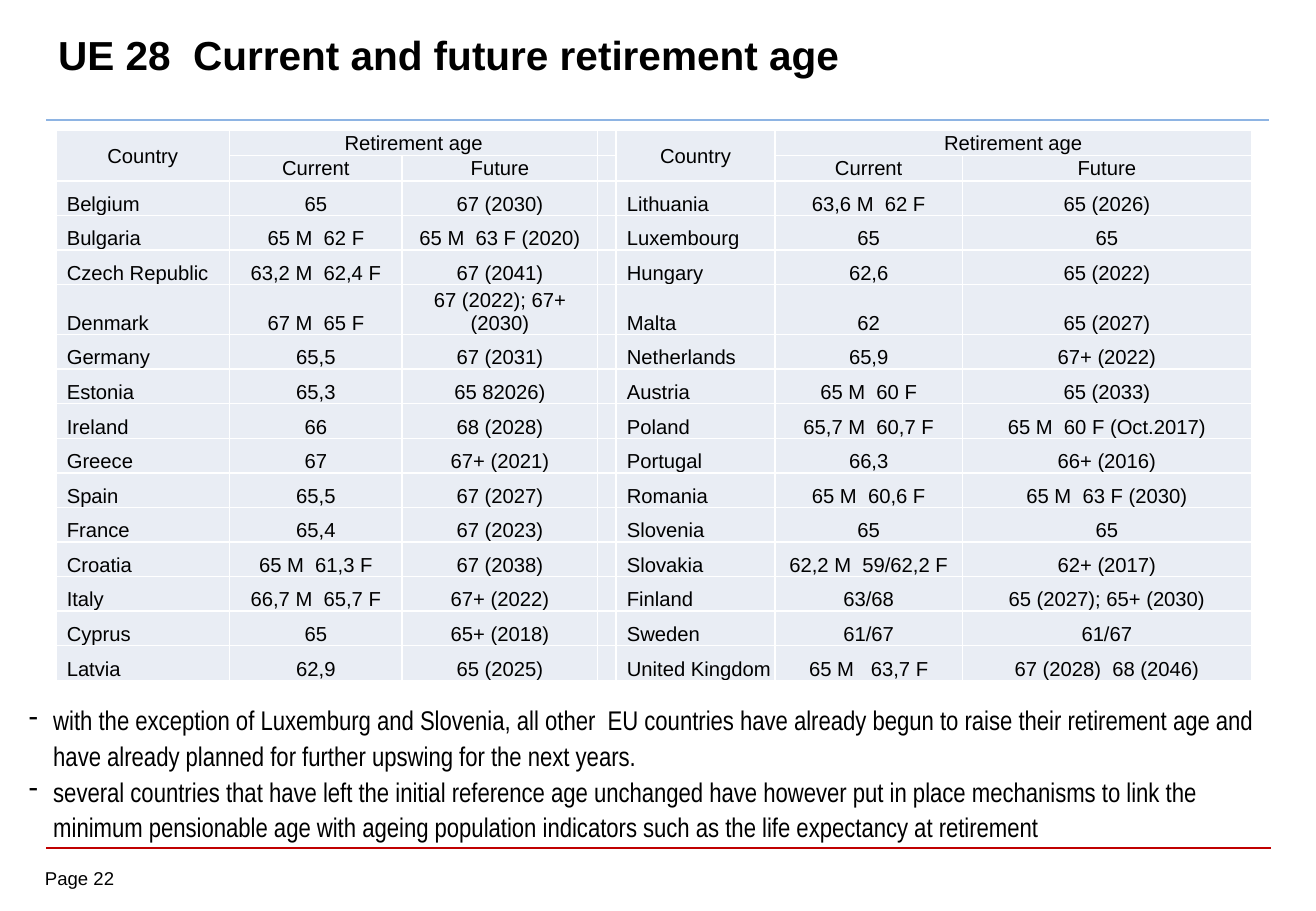
from pptx import Presentation
from pptx.dml.color import RGBColor
from pptx.enum.shapes import MSO_CONNECTOR
from pptx.enum.text import MSO_ANCHOR, PP_ALIGN
from pptx.oxml.xmlchemy import OxmlElement
from pptx.util import Pt

PX = 4572  # EMU per px, 200 px to the inch
BLACK = RGBColor(0x00, 0x00, 0x00)
WHITE = RGBColor(0xFF, 0xFF, 0xFF)
RED = RGBColor(0xC0, 0x00, 0x00)
LIGHT_BLUE = RGBColor(0x8E, 0xB4, 0xE3)
CELL_FILL = RGBColor(0xE9, 0xED, 0xF4)

COLUMN_WIDTHS = [286, 284, 322, 30, 262, 308, 476]
HEADER_HEIGHT, ROW_HEIGHT, TALL_ROW_HEIGHT = 42, 57, 76
HEADER_ROWS = [
    ["Country", "Retirement age", "", "", "Country", "Retirement age", ""],
    ["", "Current", "Future", "", "", "Current", "Future"],
]
LEFT_COUNTRIES = [
    ("Belgium", "65", "67 (2030)"),
    ("Bulgaria", "65 M  62 F", "65 M  63 F (2020)"),
    ("Czech Republic", "63,2 M  62,4 F", "67 (2041)"),
    ("Denmark", "67 M  65 F", "67 (2022); 67+ (2030)"),
    ("Germany", "65,5", "67 (2031)"),
    ("Estonia", "65,3", "65 82026)"),
    ("Ireland", "66", "68 (2028)"),
    ("Greece", "67", "67+ (2021)"),
    ("Spain", "65,5", "67 (2027)"),
    ("France", "65,4", "67 (2023)"),
    ("Croatia", "65 M  61,3 F", "67 (2038)"),
    ("Italy", "66,7 M  65,7 F", "67+ (2022)"),
    ("Cyprus", "65", "65+ (2018)"),
    ("Latvia", "62,9", "65 (2025)"),
]
RIGHT_COUNTRIES = [
    ("Lithuania", "63,6 M  62 F", "65 (2026)"),
    ("Luxembourg", "65", "65"),
    ("Hungary", "62,6", "65 (2022)"),
    ("Malta", "62", "65 (2027)"),
    ("Netherlands", "65,9", "67+ (2022)"),
    ("Austria", "65 M  60 F", "65 (2033)"),
    ("Poland", "65,7 M  60,7 F", "65 M  60 F (Oct.2017)"),
    ("Portugal", "66,3", "66+ (2016)"),
    ("Romania", "65 M  60,6 F", "65 M  63 F (2030)"),
    ("Slovenia", "65", "65"),
    ("Slovakia", "62,2 M  59/62,2 F", "62+ (2017)"),
    ("Finland", "63/68", "65 (2027); 65+ (2030)"),
    ("Sweden", "61/67", "61/67"),
    ("United Kingdom", "65 M   63,7 F", "67 (2028)  68 (2046)"),
]
REMARKS = [
    "with the exception of Luxemburg and Slovenia, all other  EU countries have already begun to raise "
    "their retirement age and have already planned for further upswing for the next years.",
    "several countries that have left the initial reference age unchanged have however put in place "
    "mechanisms to link the minimum pensionable age with ageing population indicators such as the life "
    "expectancy at retirement",
]


def add_rule(slide, left, right, top, color, width):
    rule = slide.shapes.add_connector(
        MSO_CONNECTOR.STRAIGHT, left * PX, top * PX, right * PX, top * PX)
    rule.line.color.rgb = color
    rule.line.width = Pt(width)
    rule._element.spPr.append(OxmlElement("a:effectLst"))


def set_indent(paragraph, left, first=0):
    properties = paragraph._p.get_or_add_pPr()
    properties.set("marL", str(left * PX))
    properties.set("indent", str(first * PX))


def write_text(paragraph, text, size=12, font="Arial", bold=False, align=PP_ALIGN.LEFT):
    paragraph.alignment = align
    run = paragraph.add_run()
    run.text = text
    run.font.size = Pt(size)
    run.font.name = font
    run.font.bold = bold
    run.font.color.rgb = BLACK


def add_text_box(slide, left, top, width, height, anchor=MSO_ANCHOR.TOP, inset=True):
    box = slide.shapes.add_textbox(left * PX, top * PX, width * PX, height * PX)
    frame = box.text_frame
    frame.word_wrap = True
    frame.vertical_anchor = anchor
    if not inset:
        frame.margin_left = frame.margin_right = frame.margin_top = frame.margin_bottom = 0
    return frame


def add_remarks(slide, left, top, width, height):
    frame = add_text_box(slide, left, top, width, height)
    for index, remark in enumerate(REMARKS):
        paragraph = frame.paragraphs[0] if index == 0 else frame.add_paragraph()
        paragraph.line_spacing = 1.1
        set_indent(paragraph, 40, -40)
        bullet = OxmlElement("a:buChar")
        bullet.set("char", "-")
        paragraph._p.get_or_add_pPr().append(bullet)
        write_text(paragraph, remark, size=16, font="Arial Narrow")


def set_borders(cell, color, width):
    properties = cell._tc.get_or_add_tcPr()
    for index, side in enumerate(("a:lnL", "a:lnR", "a:lnT", "a:lnB")):
        line = OxmlElement(side)
        line.set("w", str(Pt(width)))
        fill = OxmlElement("a:solidFill")
        value = OxmlElement("a:srgbClr")
        value.set("val", str(color))
        fill.append(value)
        line.append(fill)
        properties.insert(index, line)


def fill_cell(cell, text, is_header, is_country):
    cell.fill.solid()
    cell.fill.fore_color.rgb = CELL_FILL
    set_borders(cell, WHITE, 1)
    cell.margin_left = cell.margin_right = cell.margin_top = 2 * PX
    cell.margin_bottom = 0
    cell.vertical_anchor = MSO_ANCHOR.MIDDLE if is_header else MSO_ANCHOR.BOTTOM
    paragraph = cell.text_frame.paragraphs[0]
    if not text:
        # A small end mark keeps an empty cell from stretching its row
        end_mark = OxmlElement("a:endParaRPr")
        end_mark.set("sz", "1000")
        paragraph._p.append(end_mark)
    elif is_country and not is_header:
        set_indent(paragraph, 16)
        write_text(paragraph, text)
    else:
        write_text(paragraph, text, align=PP_ALIGN.CENTER)


def add_retirement_table(slide, left, top):
    rows = HEADER_ROWS + [[*first, "", *second]
                          for first, second in zip(LEFT_COUNTRIES, RIGHT_COUNTRIES)]
    heights = [HEADER_HEIGHT] * len(HEADER_ROWS) + [
        TALL_ROW_HEIGHT if country[0] == "Denmark" else ROW_HEIGHT for country in LEFT_COUNTRIES]
    table = slide.shapes.add_table(
        len(rows), len(COLUMN_WIDTHS), left * PX, top * PX,
        sum(COLUMN_WIDTHS) * PX, sum(heights) * PX).table
    table.first_row = table.horz_banding = False
    for column, width in zip(table.columns, COLUMN_WIDTHS):
        column.width = width * PX
    for row_index, (texts, height) in enumerate(zip(rows, heights)):
        table.rows[row_index].height = height * PX
        for column_index, text in enumerate(texts):
            fill_cell(table.cell(row_index, column_index), text,
                      is_header=row_index < len(HEADER_ROWS), is_country=column_index in (0, 4))
    # Each half has a two-row country heading and a two-column age heading
    for start in (0, 4):
        table.cell(0, start).merge(table.cell(1, start))
        table.cell(0, start + 1).merge(table.cell(0, start + 2))


def main():
    presentation = Presentation()
    presentation.slide_width = 2166 * PX
    presentation.slide_height = 1500 * PX
    slide = presentation.slides.add_slide(presentation.slide_layouts[6])

    # Rules and page number
    add_rule(slide, 76, 2092, 1396, RED, 1)
    add_rule(slide, 76, 2088, 198, LIGHT_BLUE, 1.5)
    page = add_text_box(slide, 74, 1428, 146, 44, inset=False)
    write_text(page.paragraphs[0], "Page 22", size=11)

    # Title
    title = add_text_box(slide, 76, 18, 1984, 142, anchor=MSO_ANCHOR.MIDDLE)
    write_text(title.paragraphs[0], "UE 28  Current and future retirement age", size=24, bold=True)

    # Table and remarks
    add_retirement_table(slide, 92, 214)
    add_remarks(slide, 28, 1144, 2094, 258)

    presentation.save("out.pptx")


if __name__ == "__main__":
    main()
